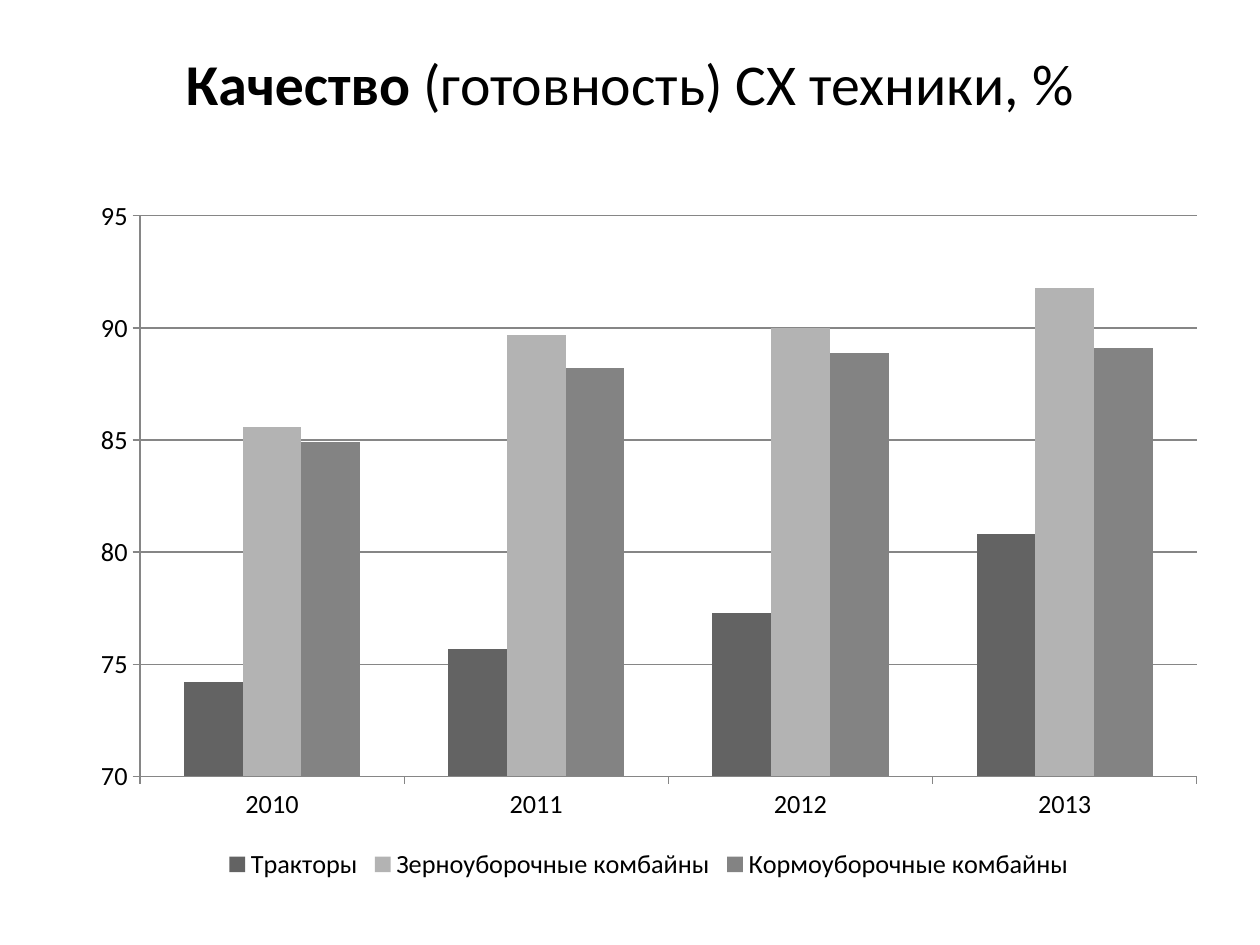
from pptx import Presentation
from pptx.chart.data import CategoryChartData
from pptx.dml.color import RGBColor
from pptx.enum.chart import XL_CHART_TYPE as Chart, XL_LEGEND_POSITION as Legend, XL_TICK_MARK as Tick
from pptx.enum.text import MSO_ANCHOR as Anchor, PP_ALIGN as Align
from pptx.util import Inches, Pt

W, H = Inches(10), Inches(7.5)
FONT, INK, LINE = "Calibri", "000000", "868686"
TITLE = [("Качество", True), (" (готовность) СХ техники, %", False)]
YEARS = ["2010", "2011", "2012", "2013"]
SERIES = [
    ("Тракторы", "636363", [74.2, 75.7, 77.3, 80.8]),
    ("Зерноуборочные комбайны", "B3B3B3", [85.6, 89.7, 90, 91.8]),
    ("Кормоуборочные комбайны", "838383", [84.9, 88.2, 88.9, 89.1]),
]


def rgb(value):
    return RGBColor.from_string(value)


def share(x, y, w, h):
    return int(W * x), int(H * y), int(W * w), int(H * h)


def style(font, size):
    font.name, font.size = FONT, Pt(size)
    font.color.rgb = rgb(INK)


def add_title(s, box):
    tf = s.shapes.add_textbox(*box).text_frame
    tf.word_wrap = True
    tf.vertical_anchor = Anchor.MIDDLE
    p = tf.paragraphs[0]
    p.alignment = Align.CENTER
    for text, bold in TITLE:
        r = p.add_run()
        r.text = text
        style(r.font, 33)
        r.font.bold = bold


def add_readiness_chart(s, box):
    data = CategoryChartData()
    data.categories = YEARS
    for name, _, values in SERIES:
        data.add_series(name, values)
    chart = s.shapes.add_chart(Chart.COLUMN_CLUSTERED, *box, data).chart
    style(chart.font, 15)
    chart.has_title = False
    chart.has_legend = True
    chart.legend.position = Legend.BOTTOM
    chart.legend.include_in_layout = False

    plot = chart.plots[0]
    plot.gap_width, plot.overlap = 150, 0
    plot.vary_by_categories = False
    for series, (_, color, _) in zip(plot.series, SERIES):
        series.format.fill.solid()
        series.format.fill.fore_color.rgb = rgb(color)

    values = chart.value_axis
    values.minimum_scale, values.maximum_scale, values.major_unit = 70, 95, 5
    values.has_major_gridlines = True
    for axis in (chart.category_axis, values):
        axis.major_tick_mark, axis.minor_tick_mark = Tick.OUTSIDE, Tick.NONE
    for part in (chart.category_axis, values, values.major_gridlines):
        part.format.line.color.rgb = rgb(LINE)
        part.format.line.width = Pt(0.75)


def main():
    prs = Presentation()
    prs.slide_width, prs.slide_height = W, H
    s = prs.slides.add_slide(prs.slide_layouts[6])
    add_title(s, share(0, 0.03, 1, 0.115))
    add_readiness_chart(s, share(0.062, 0.197, 0.906, 0.74))
    prs.save("out.pptx")


if __name__ == "__main__":
    main()
